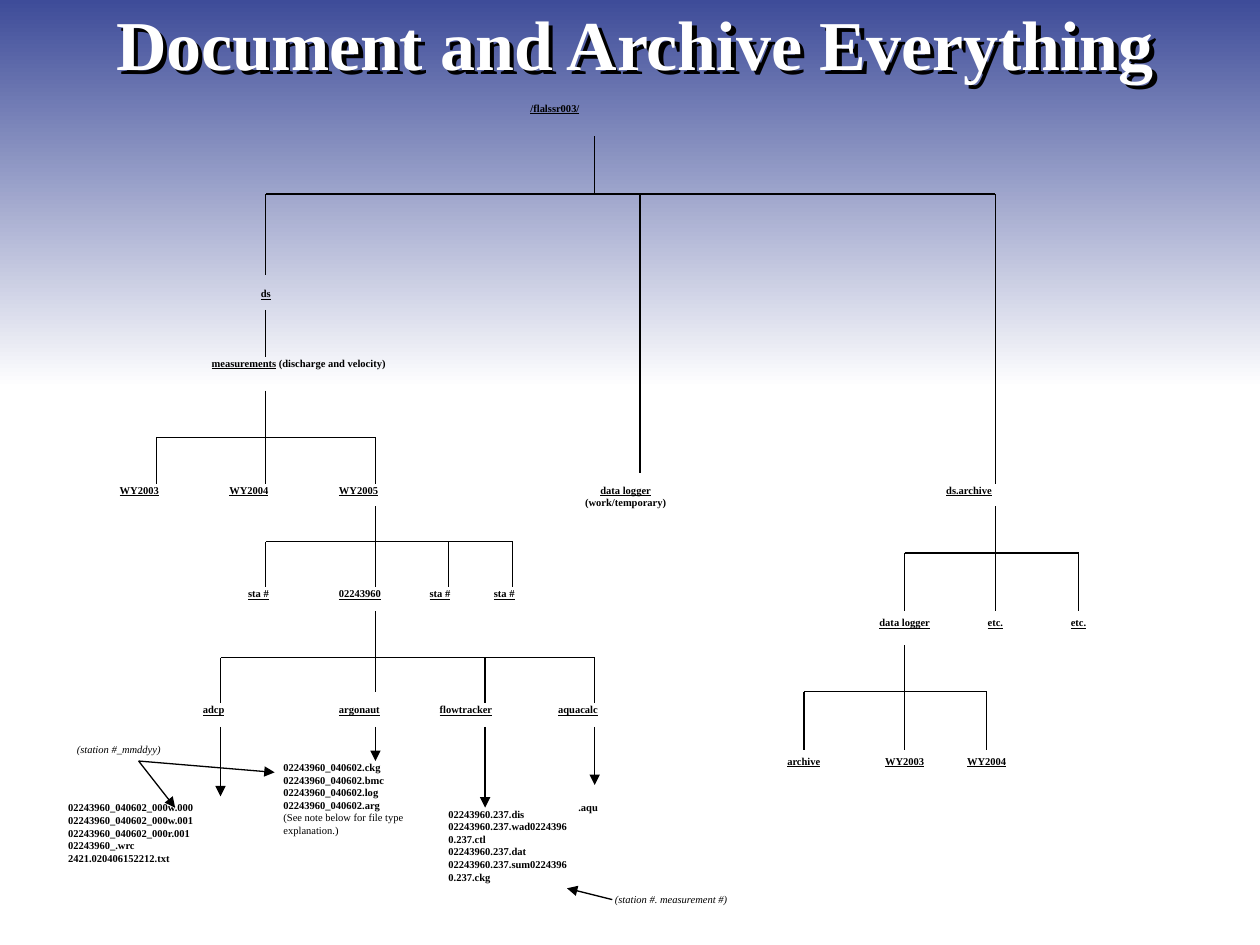
from lxml import etree
from pptx import Presentation
from pptx.dml.color import RGBColor
from pptx.enum.shapes import MSO_CONNECTOR, MSO_SHAPE
from pptx.enum.text import MSO_ANCHOR, MSO_AUTO_SIZE, PP_ALIGN
from pptx.oxml.ns import qn
from pptx.util import Inches, Pt

BLACK = RGBColor(0x00, 0x00, 0x00)
WHITE = RGBColor(0xFF, 0xFF, 0xFF)
INDIGO = RGBColor(0x3E, 0x4C, 0x99)
FONT = "Times New Roman"
STRAIGHT = MSO_CONNECTOR.STRAIGHT
RECTANGLE = MSO_SHAPE.RECTANGLE
MIDDLE = MSO_ANCHOR.MIDDLE
GROW, FIXED = MSO_AUTO_SIZE.SHAPE_TO_FIT_TEXT, MSO_AUTO_SIZE.NONE
LEFT, CENTER = PP_ALIGN.LEFT, PP_ALIGN.CENTER
PADDING = (0.09, 0.04)


def add_line(slide, start, end, arrow=False):
    line = slide.shapes.add_connector(STRAIGHT, *map(Inches, (*start, *end)))
    line.line.color.rgb = BLACK
    line.line.width = Pt(0.75)
    properties = line.element.spPr
    if arrow:
        etree.SubElement(properties.find(qn("a:ln")), qn("a:tailEnd"), type="triangle")
    etree.SubElement(properties, qn("a:effectLst"))


def add_text(slide, box, paragraphs, align=LEFT, padding=(0, 0), wrap=False):
    shape = slide.shapes.add_textbox(*map(Inches, box))
    frame = shape.text_frame
    frame.word_wrap = wrap
    frame.auto_size = GROW
    frame.margin_left = frame.margin_right = Inches(padding[0])
    frame.margin_top = frame.margin_bottom = Inches(padding[1])
    for index, runs in enumerate(paragraphs):
        paragraph = frame.add_paragraph() if index else frame.paragraphs[0]
        paragraph.alignment = align
        for text, style in runs:
            run = paragraph.add_run()
            run.text = text
            run.font.name = FONT
            run.font.size = Pt(6)
            run.font.color.rgb = BLACK
            run.font.bold = "b" in style
            run.font.italic = "i" in style
            run.font.underline = "u" in style


def add_folder(slide, box, name, **options):
    add_text(slide, box, [[(name, "bu")]], **options)


def add_files(slide, box, names, note=None, padding=(0, 0)):
    paragraphs = [[(name, "b")] for name in names]
    if note:
        paragraphs.append([(note, "")])
    add_text(slide, box, paragraphs, padding=padding, wrap=True)


def add_note(slide, box, text):
    add_text(slide, box, [[(text, "i")]], padding=PADDING, wrap=True)


def add_fork(slide, box, trunk, bar, branches):
    left, top, width, height = box
    bar_y = top + bar
    add_line(slide, (left + trunk, top), (left + trunk, bar_y))
    add_line(slide, (left, bar_y), (left + width, bar_y))
    for offset, shortfall in branches:
        x = left + offset
        add_line(slide, (x, bar_y), (x, top + height - shortfall))


def add_header(slide, box):
    left, top, width, height = box
    band = slide.shapes.add_shape(RECTANGLE, *map(Inches, box))
    band.shadow.inherit = False
    band.line.fill.background()
    band.fill.gradient()
    band.fill.gradient_angle = 270
    for stop, color in zip(band.fill.gradient_stops, (INDIGO, WHITE)):
        stop.color.rgb = color
    title = slide.shapes.title
    title.element.addprevious(band.element)
    title.left, title.top = Inches(left + 0.54), Inches(top)
    title.width, title.height = Inches(width - 1), Inches(0.67)
    title.fill.background()
    effects = etree.SubElement(title.element.spPr, qn("a:effectLst"))
    shadow = etree.SubElement(effects, qn("a:outerShdw"),
                              dist=str(Inches(0.05)), dir="2700000", algn="tl")
    etree.SubElement(shadow, qn("a:srgbClr"), val=str(BLACK))
    frame = title.text_frame
    frame.text = "Document and Archive Everything"
    frame.vertical_anchor = MIDDLE
    frame.auto_size = FIXED
    paragraph = frame.paragraphs[0]
    paragraph.alignment = CENTER
    font = paragraph.runs[0].font
    font.name, font.size, font.bold = FONT, Pt(40), True
    font.color.rgb = WHITE


def add_root(slide, box):
    left, top, width, height = box
    add_folder(slide, (left + 2.1, top, 0.59, 0.16), "/flalssr003/")
    add_fork(slide, (left, top + 0.27, width, height - 0.27), 2.61, 0.46,
             [(0, 1.66), (2.97, 0.09), (width, 0)])
    add_text(slide, (left + 2.53, top + height, 0.65, 0.2),
             [[("data logger", "bu")], [("(work/temporary)", "b")]], align=CENTER)


def add_measurements(slide, box):
    left, top, width, height = box
    center = left + width / 2
    add_folder(slide, (center - 0.05, top, 0.1, 0.1), "ds", align=CENTER)
    add_line(slide, (center, top + 0.18), (center, top + 0.55))
    add_text(slide, (center - 0.43, top + 0.55, 2.11, 0.16),
             [[("measurements", "bu"), (" (discharge and velocity)", "b")]])
    step = width / 2
    add_fork(slide, (left, top + 0.82, width, height - 0.82), step, 0.37,
             [(index * step, 0) for index in range(3)])
    for index, year in enumerate(("WY2003", "WY2004", "WY2005")):
        add_folder(slide, (left - 0.29 + index * step, top + height, 0.48, 0.16), year)


def add_stations(slide, box):
    left, top, width, height = box
    stations = [(0, -0.14, 0.2, "sta #"), (0.87, -0.29, 0.51, "02243960"),
                (1.45, -0.15, 0.2, "sta #"), (width, -0.15, 0.2, "sta #")]
    add_fork(slide, box, 0.87, 0.28, [(station[0], 0) for station in stations])
    for x, shift, label_width, name in stations:
        add_folder(slide, (left + x + shift, top + height, label_width, 0.1), name)


def add_instruments(slide, box):
    left, top, width, height = box
    instruments = [(0, 0, -0.14, 0.25, "adcp", 0.55),
                   (1.23, 0.09, -0.29, 0.4, "argonaut", 0.27),
                   (2.1, 0, -0.36, 0.5, "flowtracker", 0.64),
                   (width, 0, -0.29, 0.4, "aquacalc", 0.46)]
    add_fork(slide, box, 1.23, 0.37, [item[:2] for item in instruments])
    bottom = top + height
    for x, _, shift, label_width, name, arrow in instruments:
        add_folder(slide, (left + x + shift, bottom, label_width, 0.1), name)
        add_line(slide, (left + x, bottom + 0.19),
                 (left + x, bottom + 0.19 + arrow), arrow=True)


def add_file_lists(slide, box):
    left, top, width, height = box
    add_files(slide, (left, top + 0.46, 1.81, 0.92),
              ["02243960_040602_000w.000", "02243960_040602_000w.001",
               "02243960_040602_000r.001", "02243960_.wrc",
               "2421.020406152212.txt"], padding=PADDING)
    add_files(slide, (left + 1.8, top + 0.18, 1.23, 0.93),
              [f"02243960_040602.{kind}" for kind in ("ckg", "bmc", "log", "arg")],
              note="(See note below for file type explanation.)")
    add_files(slide, (left + 3.11, top + 0.55, 0.94, 1.24),
              ["02243960.237.dis 02243960.237.wad02243960.237.ctl",
               "02243960.237.dat 02243960.237.sum02243960.237.ckg"])
    add_text(slide, (left + 4.05, top + 0.46, 0.34, 0.19),
             [[(".aqu", "b")]], padding=PADDING)
    add_note(slide, (left + 0.07, top, 1.17, 0.19), "(station #_mmddyy)")
    add_note(slide, (left + 4.34, top + 1.19, 1.31, 0.45), "(station #. measurement #)")
    name_start = (left + 0.65, top + 0.18)
    add_line(slide, name_start, (left + 0.94, top + 0.55), arrow=True)
    add_line(slide, name_start, (left + 1.73, top + 0.27), arrow=True)
    add_line(slide, (left + 4.41, top + 1.28), (left + 4.05, top + 1.19), arrow=True)


def add_archive(slide, box):
    left, top, width, height = box
    add_folder(slide, (left + 1.13, top, 0.4, 0.1), "ds.archive")
    levels = [(0.8, 0.18, 1.38, 0.83, 0.72,
               [(0, 1.16, "data logger"), (0.72, 0.44, "etc."), (1.38, 0.43, "etc.")]),
              (0, 1.28, 1.45, 0.83, 0.8,
               [(0, 1.16, "archive"), (0.8, 1.16, "WY2003"), (1.45, 1.15, "WY2004")])]
    for x, y, fork_width, fork_height, trunk, folders in levels:
        add_fork(slide, (left + x, top + y, fork_width, fork_height), trunk, 0.37,
                 [(offset, 0) for offset, _, _ in folders])
        for offset, label_width, name in folders:
            label_left = left + x + offset - label_width / 2
            add_folder(slide, (label_left, top + y + fork_height, label_width, 0.19),
                       name, align=CENTER, padding=PADDING, wrap=True)


def main():
    presentation = Presentation()
    presentation.slide_width, presentation.slide_height = Inches(10), Inches(7.5)
    slide = presentation.slides.add_slide(presentation.slide_layouts[5])
    add_header(slide, (0, 0, 10, 3.08))
    add_root(slide, (2.11, 0.81, 5.79, 3.03))
    add_measurements(slide, (1.24, 2.28, 1.74, 1.56))
    add_stations(slide, (2.11, 4.02, 1.96, 0.64))
    add_instruments(slide, (1.75, 4.85, 2.97, 0.73))
    add_file_lists(slide, (0.45, 5.86, 5.65, 1.64))
    add_archive(slide, (6.38, 3.84, 2.18, 2.3))
    presentation.save("out.pptx")


if __name__ == "__main__":
    main()
